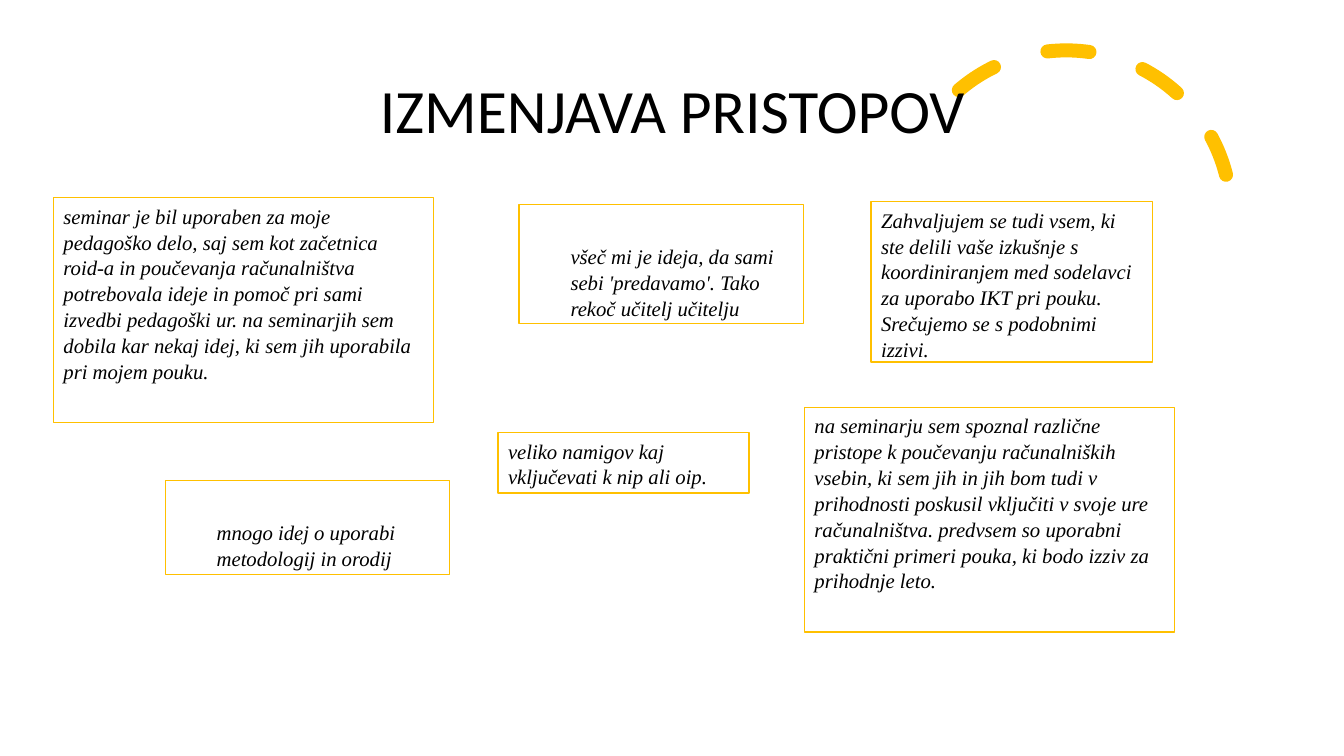
import pptx
import pptx.util
import pptx.dml.color
import pptx.enum.dml
import pptx.enum.shapes
import pptx.enum.text
import pptx.oxml.ns

Pt = pptx.util.Pt
Inches = pptx.util.Inches
Shape = pptx.enum.shapes.MSO_SHAPE
Anchor = pptx.enum.text.MSO_ANCHOR
Align = pptx.enum.text.PP_ALIGN


def paint(code):
    return pptx.dml.color.RGBColor.from_string(code)


class Page:
    """Style and current slide; places are percent shares of its size."""
    gold, white, black = "FFC000", "FFFFFF", "000000"
    head, body = "Calibri", "Times New Roman"

    def __init__(self, deck):
        self.wide, self.high = deck.slide_width, deck.slide_height
        self.slide = deck.slides.add_slide(deck.slide_layouts[6])

    def place(self, left, top, width, height):
        return (round(self.wide * left / 100), round(self.high * top / 100),
                round(self.wide * width / 100), round(self.high * height / 100))

    def shape(self, kind, spot, weight):
        item = self.slide.shapes.add_shape(kind, *self.place(*spot))
        item.shadow.inherit = False
        item.line.color.rgb = paint(self.gold)
        item.line.width = Pt(weight)
        return item

    def add_run(self, para, text, face, size, slant=False):
        run = para.add_run()
        run.text = text
        run.font.name = face
        run.font.size = Pt(size)
        run.font.italic = slant
        run.font.color.rgb = paint(self.black)

    def arc(self, spot, start, turn):
        """Dashed arc with round ends; start is in degrees."""
        item = self.shape(Shape.ARC, spot, 10)
        item.adjustments[0] = start * 0.6
        item.adjustments[1] = 0
        item.rotation = turn
        item.fill.background()
        item.line.dash_style = pptx.enum.dml.MSO_LINE.DASH
        item.element.spPr.find(pptx.oxml.ns.qn("a:ln")).set("cap", "rnd")

    def title(self, spot, text):
        frame = self.slide.shapes.add_textbox(*self.place(*spot)).text_frame
        frame.word_wrap = True
        frame.vertical_anchor = Anchor.MIDDLE
        para = frame.paragraphs[0]
        para.alignment = Align.CENTER
        para.line_spacing = 0.9
        self.add_run(para, text, self.head, 44)

    def quote(self, spot, text, inset=False):
        """Boxed opinion; inset moves the text in and one line down."""
        item = self.shape(Shape.RECTANGLE, spot, 1)
        item.fill.solid()
        item.fill.fore_color.rgb = paint(self.white)
        frame = item.text_frame
        frame.word_wrap = True
        frame.vertical_anchor = Anchor.TOP
        if inset:
            frame.margin_left, frame.margin_top = Inches(0.51), Inches(0.38)
        para = frame.paragraphs[0]
        para.alignment = Align.LEFT
        para.line_spacing = 1.04
        para.space_after = Pt(6)
        self.add_run(para, text, self.body, 14.8, True)


QUOTES = [
    ((37.06, 57.2, 18.68, 8),
     "veliko namigov kaj vključevati k nip ali oip.", False),
    ((12.3, 63.6, 21.16, 12.4),
     "mnogo idej o uporabi metodologij in orodij", True),
    ((59.86, 53.87, 27.53, 29.73),
     "na seminarju sem spoznal različne pristope k poučevanju računalniških "
     "vsebin, ki sem jih in jih bom tudi v prihodnosti poskusil vključiti v "
     "svoje ure računalništva. predvsem so uporabni praktični primeri pouka, "
     "ki bodo izziv za prihodnje leto.", False),
    ((3.98, 26.13, 28.28, 29.73),
     "seminar je bil uporaben za moje pedagoško delo, saj sem kot začetnica "
     "roid-a in poučevanja računalništva potrebovala ideje in pomoč pri sami "
     "izvedbi pedagoški ur. na seminarjih sem dobila kar nekaj idej, ki sem "
     "jih uporabila pri mojem pouku.", False),
    ((64.82, 26.67, 20.93, 21.2),
     "Zahvaljujem se tudi vsem, ki ste delili vaše izkušnje s koordiniranjem "
     "med sodelavci za uporabo IKT pri pouku. Srečujemo se s podobnimi "
     "izzivi.", False),
    ((38.63, 27.07, 21.16, 15.73),
     "všeč mi je ideja, da sami sebi 'predavamo'. Tako rekoč učitelj "
     "učitelju", True),
]


def main():
    deck = pptx.Presentation()
    deck.slide_width, deck.slide_height = Inches(13.33), Inches(7.5)
    page = Page(deck)
    page.arc((67.07, 6.67, 24.53, 43.6), 243.55, 345.8)
    page.title((6.9, 5.33, 86.27, 19.33), "IZMENJAVA PRISTOPOV")
    for spot, text, inset in QUOTES:
        page.quote(spot, text, inset)
    deck.save("out.pptx")


if __name__ == "__main__":
    main()
